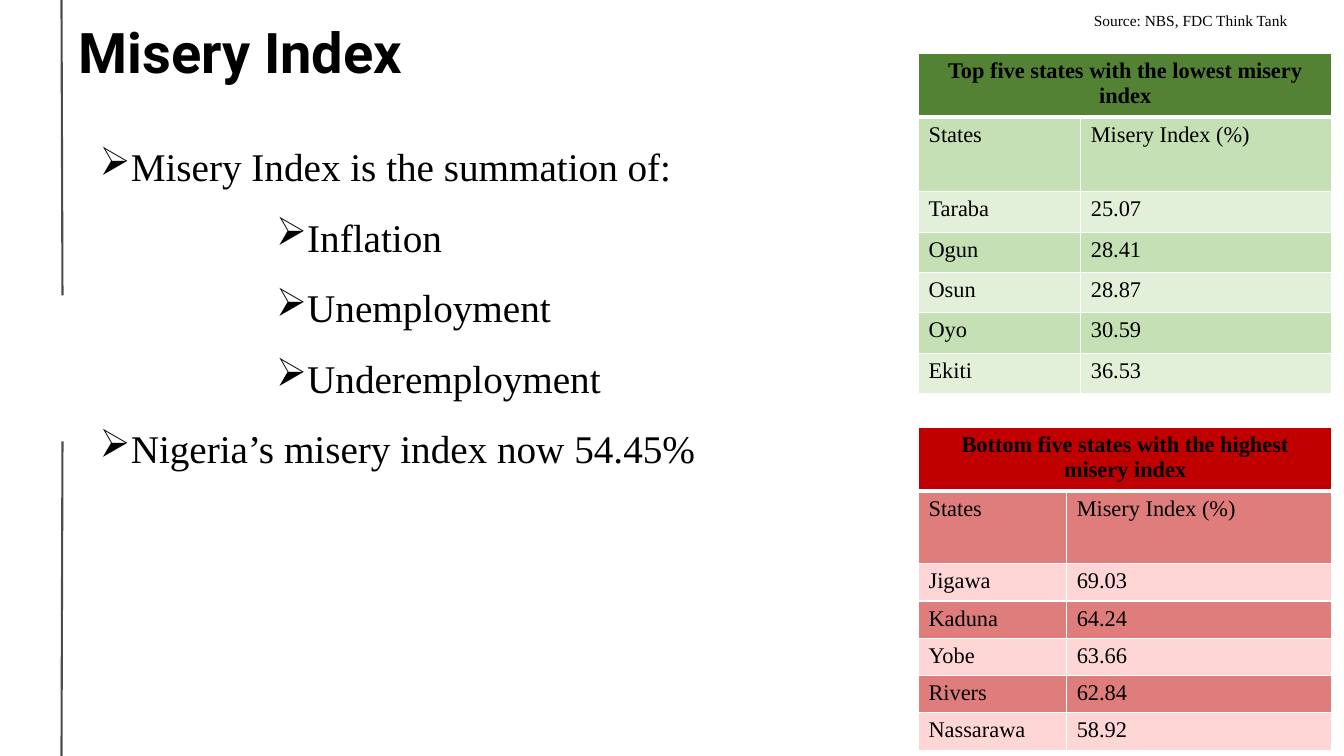
from lxml import etree
from pptx import Presentation
from pptx.dml.color import RGBColor
from pptx.enum.text import MSO_ANCHOR, PP_ALIGN
from pptx.oxml.ns import qn
from pptx.util import Inches, Pt

# Content
TITLE = "Misery Index"
SOURCE = "Source: NBS, FDC Think Tank"
BULLETS = [  # level, left margin, text
    (0, 0.25, "Misery Index is the summation of:"),
    (4, 2, "Inflation"),
    (4, 2, "Unemployment"),
    (4, 2, "Underemployment"),
    (0, 0.25, "Nigeria’s misery index now 54.45%"),
]
HEADINGS = ("States", "Misery Index (%)")
TABLES = [
    dict(title="Top five states with the lowest misery index", top=0.53,
         cols=(1.61, 2.49), rows=(0.62, 0.74, 0.4),
         fills=("green", "green_mid", "green_pale"),
         data=[("Taraba", "25.07"), ("Ogun", "28.41"), ("Osun", "28.87"),
               ("Oyo", "30.59"), ("Ekiti", "36.53")]),
    dict(title="Bottom five states with the highest misery index", top=4.24,
         cols=(1.47, 2.63), rows=(0.62, 0.72, 0.37),
         fills=("red", "red_mid", "red_pale"),
         data=[("Jigawa", "69.03"), ("Kaduna", "64.24"), ("Yobe", "63.66"),
               ("Rivers", "62.84"), ("Nassarawa", "58.92")]),
]
RULES = [(0.62, 4.38, 0.61, 7.5), (0.61, 0, 0.62, 2.93)]
TABLE_LEFT = 9.11
COLORS = {
    "black": "000000", "white": "FFFFFF",
    "green": "548235", "green_mid": "C5E0B4", "green_pale": "E2F0D9",
    "red": "C00000", "red_mid": "DF7D7D", "red_pale": "FED6D6",
}
SERIF = "Times New Roman"


def rgb(name):
    return RGBColor.from_string(COLORS[name])


def add_text(p, text, size, name=SERIF, bold=False):
    r = p.add_run()
    r.text = text
    for key, value in dict(size=Pt(size), name=name, bold=bold).items():
        setattr(r.font, key, value)
    r.font.color.rgb = rgb("black")


def add_box(x, y, w, h):
    tf = s.shapes.add_textbox(*map(Inches, (x, y, w, h))).text_frame
    tf.word_wrap = True
    return tf


def set_borders(cell, widths):
    tcPr = cell._tc.get_or_add_tcPr()
    for side in "LRTB":
        ln = etree.SubElement(tcPr, qn(f"a:ln{side}"), w=str(Pt(widths.get(side, 1))))
        fill = etree.SubElement(ln, qn("a:solidFill"))
        etree.SubElement(fill, qn("a:srgbClr"), val=COLORS["white"])


def add_state_table(title, top, cols, rows, fills, data):
    cells = [(title, ""), HEADINGS, *data]
    heights = [*rows, *rows[-1:] * (len(data) - 1)]
    table = s.shapes.add_table(
        len(cells), len(cols), Inches(TABLE_LEFT), Inches(top),
        Inches(sum(cols)), Inches(sum(heights))).table
    table.first_row = table.horz_banding = False
    for col, width in zip(table.columns, cols):
        col.width = Inches(width)
    table.cell(0, 0).merge(table.cell(0, 1))
    for i, texts in enumerate(cells):
        table.rows[i].height = Inches(heights[i])
        shade = fills[0] if i == 0 else fills[2 - i % 2]
        for j, text in enumerate(texts):
            cell = table.cell(i, j)
            set_borders(cell, {0: {"B": 3}, 1: {"T": 3}}.get(i, {}))
            cell.fill.solid()
            cell.fill.fore_color.rgb = rgb(shade)
            if text:
                p = cell.text_frame.paragraphs[0]
                p.alignment = PP_ALIGN.CENTER if i == 0 else PP_ALIGN.LEFT
                add_text(p, text, 16, bold=i == 0)


prs = Presentation()
prs.slide_width, prs.slide_height = Inches(13.33), Inches(7.5)
s = prs.slides.add_slide(prs.slide_layouts[5])

# Vertical rules at the left edge
for ends in RULES:
    line = s.shapes.add_connector(1, *map(Inches, ends))
    line.line.width = Pt(1.5)
    line.line.color.rgb = rgb("black")
    clr = line._element.spPr.find(".//" + qn("a:srgbClr"))
    etree.SubElement(clr, qn("a:alpha"), val="70000")
    etree.SubElement(line._element.spPr, qn("a:effectLst"))

# Title
title = s.shapes.title
for key, value in dict(left=0.78, top=0.29, width=10.57, height=0.52).items():
    setattr(title, key, Inches(value))
tf = title.text_frame
for side in ("left", "right", "top", "bottom"):
    setattr(tf, f"margin_{side}", 0)
tf.word_wrap = False
tf.vertical_anchor = MSO_ANCHOR.MIDDLE
p = tf.paragraphs[0]
p.alignment, p.line_spacing = PP_ALIGN.LEFT, 0.9
add_text(p, TITLE, 40, "Roboto", True)

# Bullets
tf = add_box(0.89, 1.27, 7.57, 5.14)
for i, (level, margin, text) in enumerate(BULLETS):
    p = tf.add_paragraph() if i else tf.paragraphs[0]
    p.level, p.line_spacing = level, 1.2
    p.space_before = Pt(10 if i else 0)
    pPr = p._p.get_or_add_pPr()
    pPr.set("marL", str(Inches(margin)))
    pPr.set("indent", str(Inches(-0.25)))
    etree.SubElement(pPr, qn("a:buChar"), char="➢")
    add_text(p, text, 28)

# State tables
for state_table in TABLES:
    add_state_table(**state_table)

# Source line
add_text(add_box(10.75, 0.06, 2.58, 0.29).paragraphs[0], SOURCE, 11)

prs.save("out.pptx")
